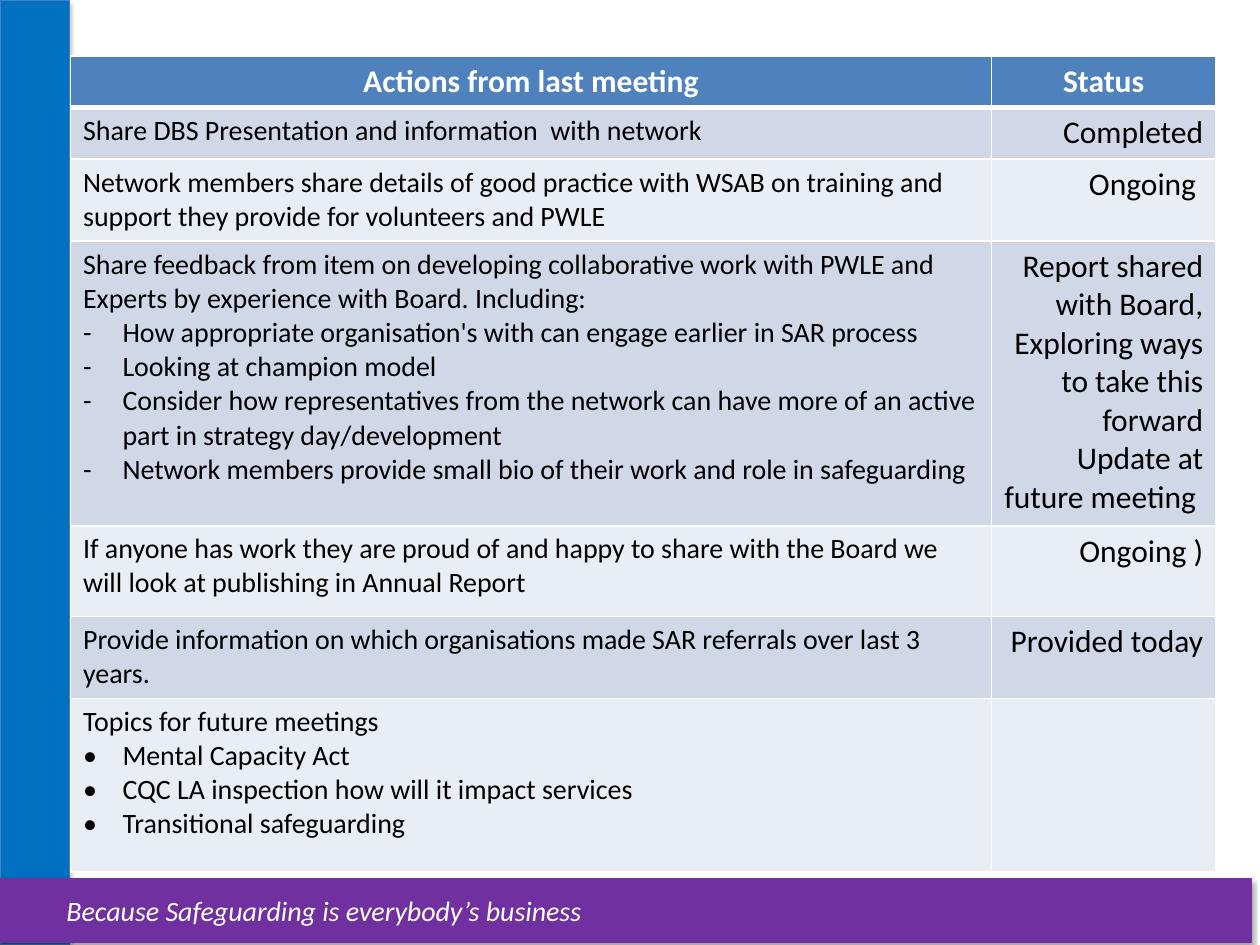
"""Build a slide listing the actions from the last meeting and their status."""
from lxml.etree import SubElement
from pptx import Presentation
from pptx.dml.color import RGBColor
from pptx.enum.shapes import MSO_SHAPE
from pptx.enum.text import MSO_ANCHOR, PP_ALIGN
from pptx.oxml import parse_xml
from pptx.oxml.ns import nsdecls, qn
from pptx.util import Pt

COLOURS = {
    "blue": "0070C0", "edge": "4B7EBC", "purple": "7030A0", "header": "4F81BD",
    "dark band": "D0D8E8", "light band": "E9EDF4", "white": "FFFFFF", "black": "000000",
}


def colour(name):
    return RGBColor.from_string(COLOURS[name])


def write(para, text, size=16, ink="black", bold=False, italic=False,
          align=PP_ALIGN.LEFT, bullet=None):
    para.alignment = align
    span = para.add_run()
    span.text = text
    span.font.name = "Calibri"
    span.font.size = Pt(size)
    span.font.bold = bold
    span.font.italic = italic
    span.font.color.rgb = colour(ink)
    if bullet:
        properties = para._p.get_or_add_pPr()
        properties.set("marL", str(Pt(22.5)))
        properties.set("indent", str(Pt(-22.5)))
        SubElement(properties, qn("a:buFont"), typeface="Calibri")
        SubElement(properties, qn("a:buChar"), char=bullet)


deck = Presentation()
deck.slide_width, deck.slide_height = Pt(720), Pt(540)
page = deck.slides.add_slide(deck.slide_layouts[6])

bars = []
for left, top, width, height, fill, line in (
    (0, 0, 39.6, 540, "blue", "edge"),
    (-5, 502, 720, 36.5, "purple", "purple"),
):
    bar = page.shapes.add_shape(MSO_SHAPE.RECTANGLE, Pt(left), Pt(top), Pt(width), Pt(height))
    bar.fill.solid()
    bar.fill.fore_color.rgb = colour(fill)
    bar.line.color.rgb = colour(line)
    bar.line.width = Pt(0.75)
    bar.shadow.inherit = False
    effects = bar._element.spPr.find(qn("a:effectLst"))
    effects.append(parse_xml(
        f'<a:outerShdw {nsdecls("a")} blurRad="{Pt(3.1)}" dist="{Pt(1.8)}" dir="5400000" '
        f'rotWithShape="0"><a:srgbClr val="{COLOURS["black"]}"><a:alpha val="35000"/>'
        '</a:srgbClr></a:outerShdw>'))
    bars.append(bar)

motto = bars[-1].text_frame
motto.word_wrap = True
motto.vertical_anchor = MSO_ANCHOR.MIDDLE
motto.margin_left = Pt(43)
write(motto.paragraphs[0], "Because Safeguarding is everybody’s business", ink="white", italic=True)

actions = [
    (29.5, ["Actions from last meeting"], ["Status"]),
    (29.5, ["Share DBS Presentation and information  with network"], ["Completed"]),
    (46.8, ["Network members share details of good practice with WSAB on training and "
            "support they provide for volunteers and PWLE"], ["Ongoing "]),
    (162.7, ["Share feedback from item on developing collaborative work with PWLE and "
             "Experts by experience with Board. Including:",
             "How appropriate organisation's with can engage earlier in SAR process",
             "Looking at champion model",
             "Consider how representatives from the network can have more of an active "
             "part in strategy day/development",
             "Network members provide small bio of their work and role in safeguarding"],
     ["Report shared with Board, Exploring ways to take this forward",
      "Update at future meeting "]),
    (51.8, ["If anyone has work they are proud of and happy to share with the Board we "
            "will look at publishing in Annual Report"], ["Ongoing )"]),
    (46.8, ["Provide information on which organisations made SAR referrals over last 3 years."],
     ["Provided today "]),
    (99.4, ["Topics for future meetings", "Mental Capacity Act",
            "CQC LA inspection how will it impact services", "Transitional safeguarding"], []),
]
bullets = {3: "-", 6: "•"}

table = page.shapes.add_table(len(actions), 2, Pt(40.3), Pt(32), Pt(654.5), Pt(466.5)).table
table.columns[0].width, table.columns[1].width = Pt(526.3), Pt(128.2)

for row, (height, *columns) in enumerate(actions):
    table.rows[row].height = Pt(height)
    band = "header" if row == 0 else "dark band" if row % 2 else "light band"
    for column, lines in enumerate(columns):
        cell = table.cell(row, column)
        for side in "LRTB":
            heavy = (row, side) in ((0, "B"), (1, "T"))
            cell._tc.get_or_add_tcPr().append(parse_xml(
                f'<a:ln{side} {nsdecls("a")} w="{Pt(3 if heavy else 1)}"><a:solidFill>'
                f'<a:srgbClr val="{COLOURS["white"]}"/></a:solidFill></a:ln{side}>'))
        cell.fill.solid()
        cell.fill.fore_color.rgb = colour(band)
        for index, text in enumerate(lines):
            frame = cell.text_frame
            para = frame.add_paragraph() if index else frame.paragraphs[0]
            if row == 0:
                write(para, text, size=18, ink="white", bold=True, align=PP_ALIGN.CENTER)
            elif column == 1:
                write(para, text, size=18, align=PP_ALIGN.RIGHT)
            else:
                write(para, text, bullet=bullets.get(row) if index else None)

deck.save("out.pptx")
